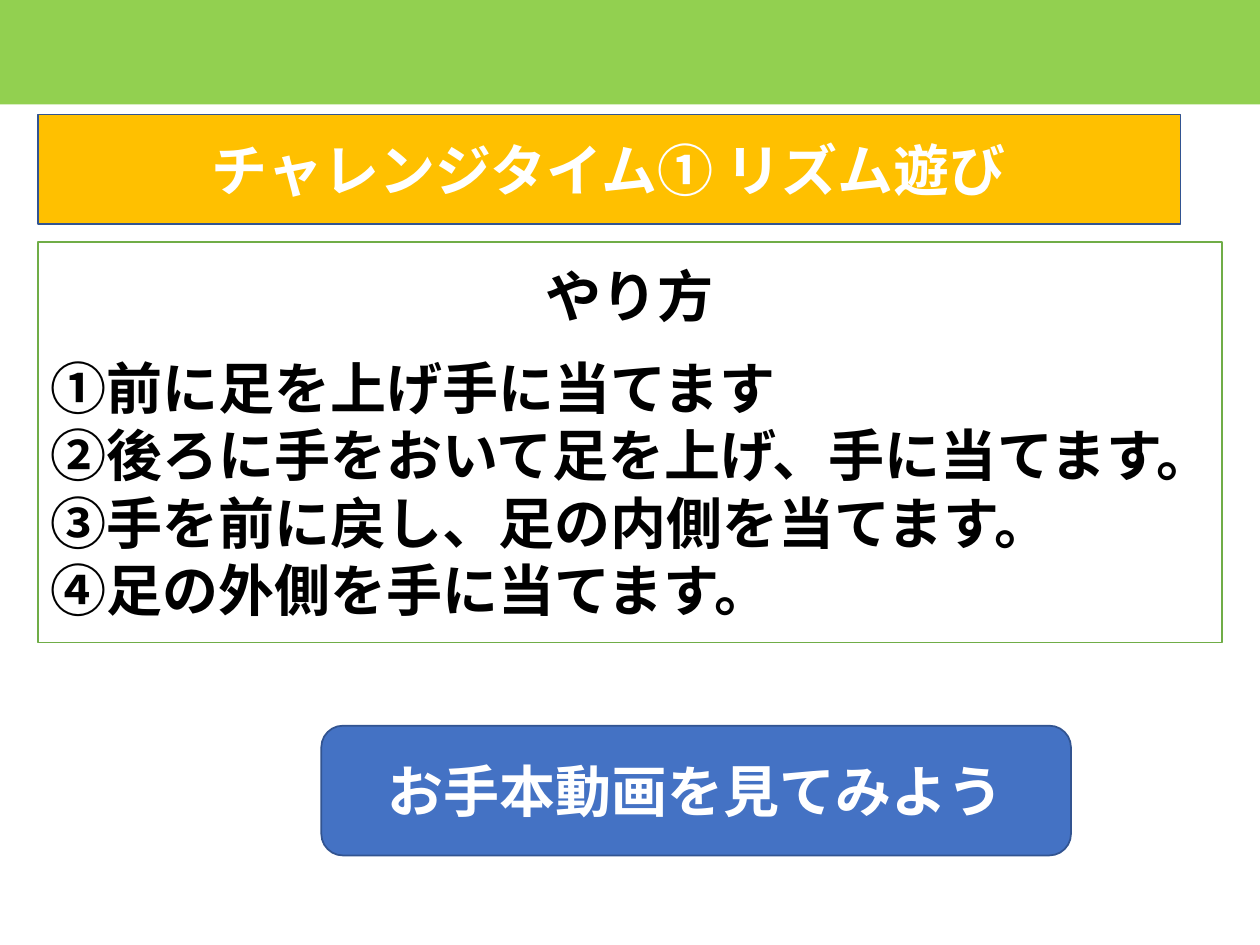
from dataclasses import dataclass

from pptx import Presentation
from pptx.dml.color import RGBColor
from pptx.enum.shapes import MSO_SHAPE
from pptx.enum.text import MSO_ANCHOR, PP_ALIGN
from pptx.util import Inches, Pt

RECT = MSO_SHAPE.RECTANGLE
ROUNDED = MSO_SHAPE.ROUNDED_RECTANGLE
MIDDLE = MSO_ANCHOR.MIDDLE
LEFT, CENTER = PP_ALIGN.LEFT, PP_ALIGN.CENTER


@dataclass(frozen=True)
class Theme:
    font: str = "Calibri"
    size: int = 32
    heading_gap: int = 14
    line_width: int = 1
    white: str = "FFFFFF"
    black: str = "000000"
    band: str = "92D050"
    title: str = "FFC000"
    button: str = "4472C4"
    blue_line: str = "325491"
    green_line: str = "70AD47"


def write(p, text, *, font, size, color, align=CENTER, bold=True, after=0):
    """Put one formatted run into a paragraph."""
    p.alignment = align
    p.space_after = Pt(after)
    r = p.add_run()
    r.text = text
    r.font.name = font
    r.font.size = Pt(size)
    r.font.bold = bold
    r.font.color.rgb = RGBColor.from_string(color)


class SlideBuilder:
    def __init__(self, slide, theme):
        self.s = slide
        self.theme = theme

    def box(self, kind, at, fill, line=None):
        sp = self.s.shapes.add_shape(kind, *(Inches(v) for v in at))
        sp.shadow.inherit = False
        sp.fill.solid()
        sp.fill.fore_color.rgb = RGBColor.from_string(fill)
        if line:
            sp.line.color.rgb = RGBColor.from_string(line)
            sp.line.width = Pt(self.theme.line_width)
        else:
            sp.line.fill.background()
        tf = sp.text_frame
        tf.word_wrap = True
        tf.vertical_anchor = MIDDLE
        return tf

    def label(self, kind, at, text, fill):
        t = self.theme
        tf = self.box(kind, at, fill, t.blue_line)
        write(tf.paragraphs[0], text, font=t.font, size=t.size, color=t.white)

    def instructions(self, at, heading, steps):
        t = self.theme
        style = dict(font=t.font, size=t.size, color=t.black)
        tf = self.box(RECT, at, t.white, t.green_line)
        write(tf.paragraphs[0], heading, after=t.heading_gap, **style)
        for step in steps:
            write(tf.add_paragraph(), step, align=LEFT, **style)


def main():
    prs = Presentation()
    prs.slide_width, prs.slide_height = Inches(10), Inches(7.5)
    theme = Theme()
    slide = SlideBuilder(prs.slides.add_slide(prs.slide_layouts[6]), theme)

    # How to play
    slide.instructions((0.3, 1.92, 9.4, 3.18), "やり方", [
        "①前に足を上げ手に当てます",
        "②後ろに手をおいて足を上げ、手に当てます。",
        "③手を前に戻し、足の内側を当てます。",
        "④足の外側を手に当てます。",
    ])

    # Video button
    slide.label(ROUNDED, (2.55, 5.76, 5.95, 1.03),
                "お手本動画を見てみよう", theme.button)

    # Top band and title
    slide.box(RECT, (-0.02, 0, 10.02, 0.83), theme.band)
    slide.label(RECT, (0.3, 0.91, 9.07, 0.87),
                "チャレンジタイム① リズム遊び", theme.title)

    prs.save("out.pptx")


if __name__ == "__main__":
    main()
